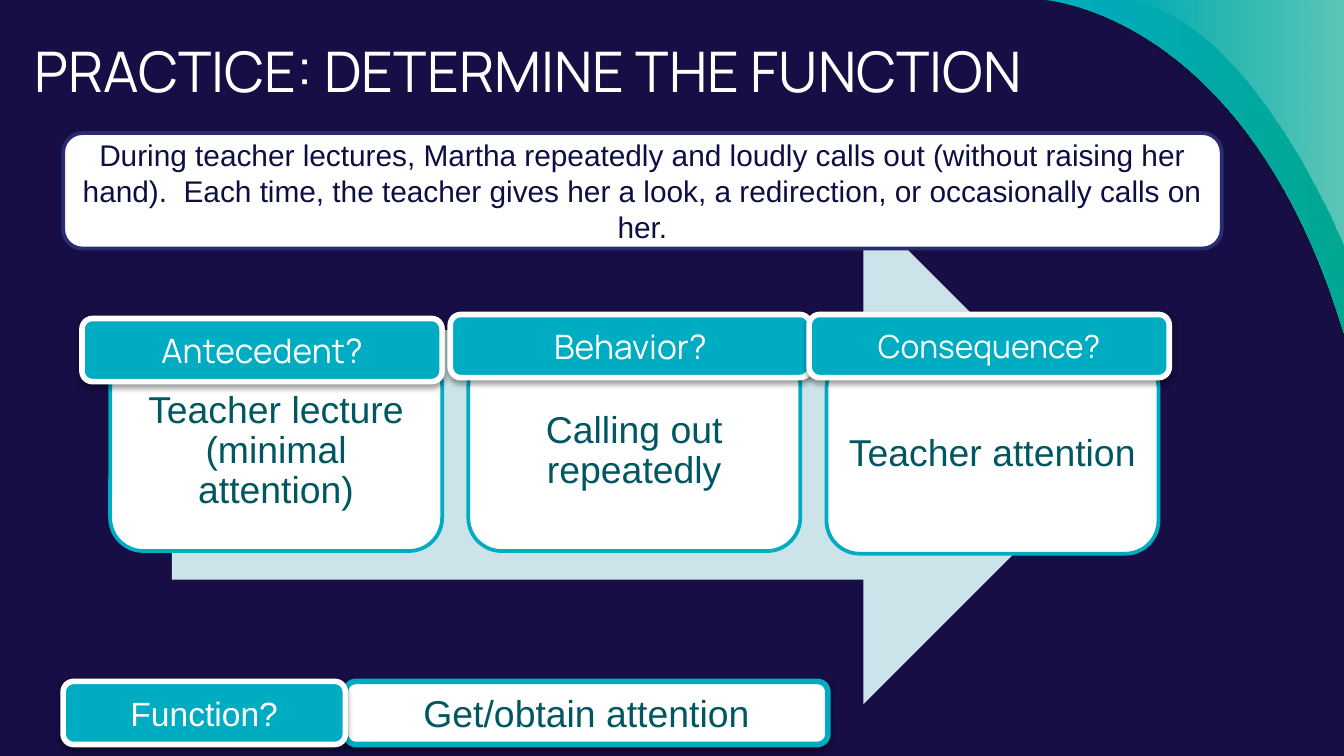
"""Build the slide that practises finding the function of a behavior."""
from lxml.etree import SubElement
from pptx import Presentation
from pptx.dml.color import RGBColor
from pptx.enum.shapes import MSO_SHAPE
from pptx.enum.text import MSO_ANCHOR, PP_ALIGN
from pptx.oxml.ns import qn
from pptx.util import Inches, Pt

NAVY = RGBColor(0x16, 0x0E, 0x44)
DARK = RGBColor(0x12, 0x10, 0x2F)
INK = RGBColor(0x0D, 0x0F, 0x41)
EDGE = RGBColor(0x29, 0x2C, 0x73)
TEAL = RGBColor(0x00, 0xAC, 0xC2)
GREEN = RGBColor(0x00, 0xA7, 0x91)
DEEP = RGBColor(0x00, 0x56, 0x61)
PALE = RGBColor(0xCC, 0xE3, 0xE9)
WHITE = RGBColor(0xFF, 0xFF, 0xFF)

WIDE = 10
HIGH = WIDE * 9 / 16
TITLE = "PRACTICE: DETERMINE THE FUNCTION"
CASE = ("During teacher lectures, Martha repeatedly and loudly calls out "
        "(without raising her hand).  Each time, the teacher gives her a look, "
        "a redirection, or occasionally calls on her.")
STEPS = [
    ("Antecedent?", 18, 0.61, 2.37, "Teacher lecture (minimal attention)", 2.62),
    ("Behavior?", 18, 3.35, 2.34, "Calling out repeatedly", 2.62),
    ("Consequence?", 17, 6.02, 2.34, "Teacher attention", 2.64),
]
FUNCTION = ("Function?", "Get/obtain attention")
SWEEPS = [
    ([(7.71, 0), (7.71, 0), (9.26, 0.08), (10, 2.54)], [(DARK, 54)]),
    ([(7.77, 0), (7.77, 0), (9.28, 0.08), (10, 2.48)], [(TEAL, 100), (GREEN, 100)]),
    ([(8.37, 0), (9.31, 0.11), (10, 1.84), (10, 1.84)], [(WHITE, 0), (WHITE, 36)]),
]
FIRST, LAST, CARD = 0.82, 6.15, (2.47, 1.48)
STEP = (LAST - FIRST) / (len(STEPS) - 1)
EDGE_X, BAR, ROW = 0.47, 0.47, 5.07
LABEL = 2.68


def curve(ends, count=40):
    """Return points along a cubic curve."""
    spots = []
    for i in range(count + 1):
        t = i / count
        parts = ((1 - t) ** 3, 3 * t * (1 - t) ** 2, 3 * t * t * (1 - t), t ** 3)
        spots.append(tuple(sum(w * p[axis] for w, p in zip(parts, ends))
                           for axis in (0, 1)))
    return spots


def fade(tint, share):
    """Set the opacity of a colour element in percent."""
    SubElement(tint, qn("a:alpha"), val=str(share * 1000))


def sweep(slide, ends, tints):
    """Draw one curved corner band."""
    spots = [(Inches(x), Inches(y)) for x, y in curve(ends) + [(WIDE, 0)]]
    pen = slide.shapes.build_freeform(*spots[0])
    pen.add_line_segments(spots[1:], close=True)
    band = pen.convert_to_shape()
    band.shadow.inherit = False
    band.line.fill.background()
    if len(tints) == 1:
        band.fill.solid()
        band.fill.fore_color.rgb = tints[0][0]
    else:
        band.fill.gradient()
        band.fill.gradient_angle = 0
        for stop, (color, _) in zip(band.fill.gradient_stops, tints):
            stop.color.rgb = color
    for tint, (_, share) in zip(band._element.spPr.iter(qn("a:srgbClr")), tints):
        fade(tint, share)


def write(shape, text, size, color, font="Arial", align=PP_ALIGN.CENTER):
    """Fill a shape with one paragraph."""
    frame = shape.text_frame
    frame.word_wrap = True
    frame.vertical_anchor = MSO_ANCHOR.MIDDLE
    para = frame.paragraphs[0]
    para.text = text
    para.alignment = align
    para.font.size, para.font.name = Pt(size), font
    para.font.color.rgb = color
    return para


def pad(shape, gap):
    """Set all four text margins in inches."""
    frame = shape.text_frame
    frame.margin_left = frame.margin_right = Inches(gap)
    frame.margin_top = frame.margin_bottom = Inches(gap)


def block(slide, box, fill, line=None, width=2, kind=MSO_SHAPE.ROUNDED_RECTANGLE):
    """Add a filled shape with an optional outline."""
    shape = slide.shapes.add_shape(kind, *map(Inches, box))
    shape.shadow.inherit = False
    shape.fill.solid()
    shape.fill.fore_color.rgb = fill
    if line is None:
        shape.line.fill.background()
    else:
        shape.line.color.rgb = line
        shape.line.width = Pt(width)
    return shape


def raised(slide, box, fill, line):
    """Add a bar with a soft shadow below it."""
    shape = block(slide, box, fill, line, 3)
    drop = SubElement(shape._element.spPr.find(qn("a:effectLst")), qn("a:outerShdw"),
                      blurRad=str(Pt(3.1)), dist=str(Pt(1.6)), dir="5400000",
                      rotWithShape="0")
    fade(SubElement(drop, qn("a:srgbClr"), val="000000"), 38)
    return shape


def main():
    """Lay out the slide and save it."""
    deck = Presentation()
    deck.slide_width, deck.slide_height = Inches(WIDE), Inches(HIGH)
    slide = deck.slides.add_slide(deck.slide_layouts[6])
    slide.background.fill.solid()
    slide.background.fill.fore_color.rgb = NAVY
    for ends, tints in SWEEPS:
        sweep(slide, ends, tints)

    block(slide, (1.28, 1.53, 7, 3.71), PALE, kind=MSO_SHAPE.RIGHT_ARROW)
    for i, (_, _, _, _, text, top) in enumerate(STEPS):
        card = block(slide, (FIRST + i * STEP, top, *CARD), WHITE, TEAL)
        pad(card, 0.08)
        write(card, text, 20, DEEP).line_spacing = 0.9

    ask, reply = FUNCTION
    write(raised(slide, (2.57, ROW, 3.59, BAR), WHITE, TEAL), reply, 20, DEEP)
    write(raised(slide, (EDGE_X, ROW, 2.1, BAR), TEAL, WHITE), ask, 18, WHITE)
    for name, size, left, top, _, _ in STEPS:
        label = raised(slide, (left, top, LABEL, BAR), TEAL, WHITE)
        write(label, name, size, WHITE, "Manrope")

    title = slide.shapes.add_textbox(*map(Inches, (0.16, 0.17, 7.69, 0.69)))
    pad(title, 0.1)
    write(title, TITLE, 30, WHITE, "Manrope", PP_ALIGN.LEFT)
    title.text_frame.vertical_anchor = MSO_ANCHOR.TOP
    write(block(slide, (EDGE_X, 0.99, 8.62, 0.86), WHITE, EDGE), CASE, 16, INK)
    deck.save("out.pptx")


if __name__ == "__main__":
    main()
